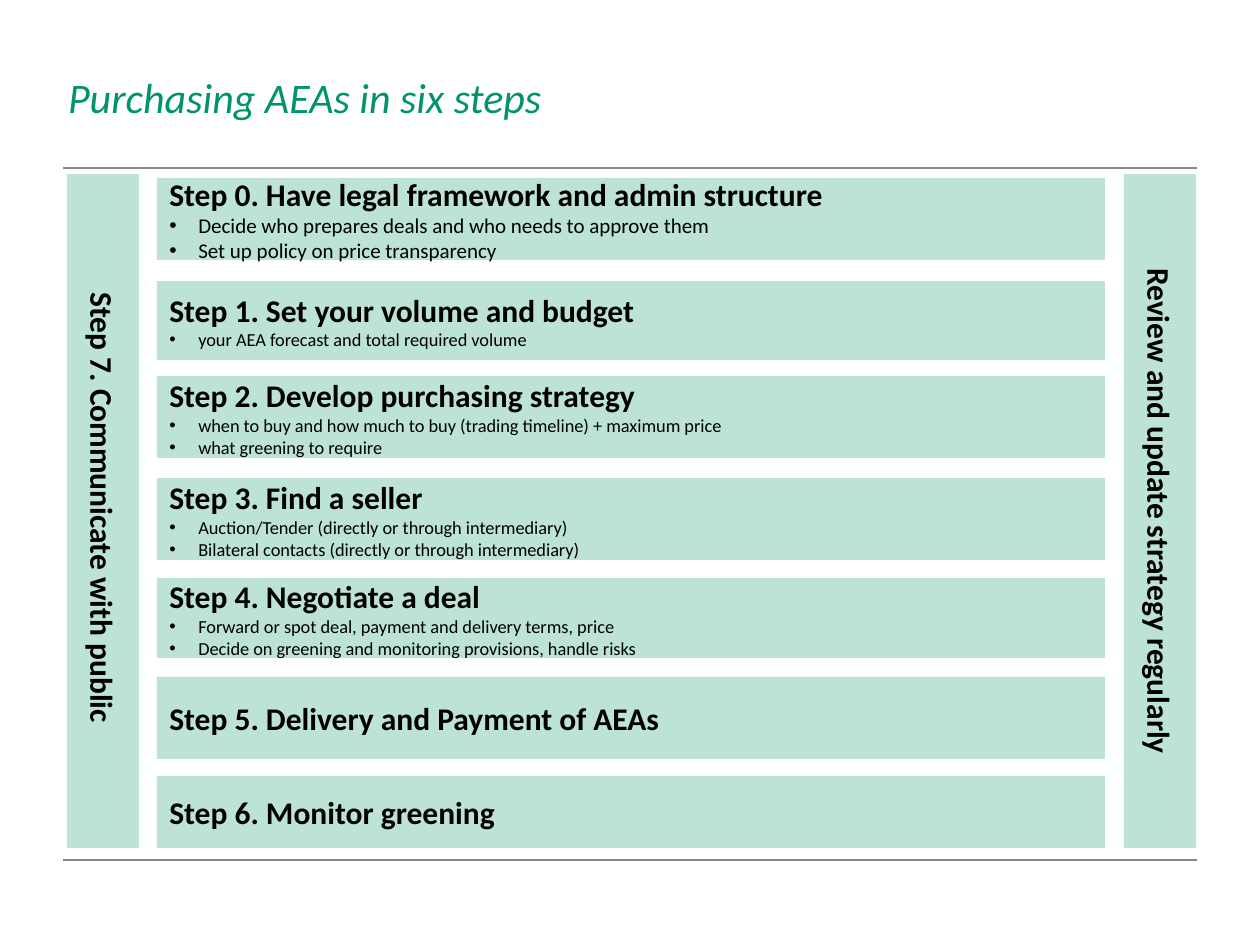
from lxml import etree
from pptx import Presentation, util as u
from pptx.dml import color
from pptx.enum import shapes, text
from pptx.oxml import ns

FONT = "Calibri"
GREEN, GREY, BLACK = "00946C", "87888A", "000000"
PANEL_ALPHA = 26
PX_PER_INCH = 126
HANGING = u.Pt(16.56)

# top, height, heading, size of the points, points
STEPS = [
    (178, 82, "Step 0. Have legal framework and admin structure", 12,
     ["Decide who prepares deals and who needs to approve them",
      "Set up policy on price transparency"]),
    (281, 79, "Step 1. Set your volume and budget", 10.5,
     ["your AEA forecast and total required volume"]),
    (376, 82, "Step 2. Develop purchasing strategy", 10.5,
     ["when to buy and how much to buy (trading timeline) + maximum price",
      "what greening to require"]),
    (478, 82, "Step 3. Find a seller", 10.5,
     ["Auction/Tender (directly or through intermediary)",
      "Bilateral contacts (directly or through intermediary)"]),
    (578, 80, "Step 4. Negotiate a deal", 10.5,
     ["Forward or spot deal, payment and delivery terms, price",
      "Decide on greening and monitoring provisions, handle risks"]),
    (677, 82, "Step 5. Delivery and Payment of AEAs", 10.5, []),
    (776, 72, "Step 6. Monitor greening", 10.5, []),
]


def px(length):
    return u.Emu(round(length * 914400 / PX_PER_INCH))


def rgb(value):
    return color.RGBColor.from_string(value)


def style(paragraph, size, colour=BLACK, bold=False, italic=False):
    for run in paragraph.runs:
        font = run.font
        font.name, font.size = FONT, u.Pt(size)
        font.bold, font.italic = bold, italic
        font.color.rgb = rgb(colour)


def add_bullet(paragraph):
    props = paragraph._p.get_or_add_pPr()
    props.set("marL", str(HANGING))
    props.set("indent", str(-HANGING))
    etree.SubElement(props, ns.qn("a:buFont")).set("typeface", "Arial")
    etree.SubElement(props, ns.qn("a:buChar")).set("char", "•")


def add_rule(slide, left, top, width):
    rule = slide.shapes.add_connector(
        shapes.MSO_CONNECTOR.STRAIGHT, px(left), px(top), px(left + width), px(top))
    rule.line.color.rgb = rgb(GREY)
    rule.line.width = u.Pt(1)
    etree.SubElement(rule._element.spPr, ns.qn("a:effectLst"))


def add_panel(slide, left, top, width, height, heading, align):
    panel = slide.shapes.add_shape(
        shapes.MSO_SHAPE.RECTANGLE, px(left), px(top), px(width), px(height))
    panel.shadow.inherit = False
    panel.line.fill.background()
    panel.fill.solid()
    panel.fill.fore_color.rgb = rgb(GREEN)
    tint = panel._element.spPr.find(".//" + ns.qn("a:srgbClr"))
    etree.SubElement(tint, ns.qn("a:alpha")).set("val", str(PANEL_ALPHA * 1000))
    frame = panel.text_frame
    frame.word_wrap = True
    frame.vertical_anchor = text.MSO_ANCHOR.MIDDLE
    frame.text = heading
    frame.paragraphs[0].alignment = align
    style(frame.paragraphs[0], 18, bold=True)
    return frame


def add_step(slide, left, top, width, height, heading, size, points):
    frame = add_panel(slide, left, top, width, height, heading, text.PP_ALIGN.LEFT)
    for point in points:
        paragraph = frame.add_paragraph()
        paragraph.text = point
        paragraph.alignment = text.PP_ALIGN.LEFT
        add_bullet(paragraph)
        style(paragraph, size)


def add_side_bar(slide, left, top, width, height, label):
    frame = add_panel(slide, left, top, width, height, label, text.PP_ALIGN.CENTER)
    frame.margin_left = frame.margin_right = u.Inches(0.1)
    frame.margin_top = frame.margin_bottom = u.Inches(0.07)
    frame._txBody.bodyPr.set("vert", "vert")


def add_title(slide, left, top, width, height, title):
    frame = slide.shapes.add_textbox(px(left), px(top), px(width), px(height)).text_frame
    frame.word_wrap = True
    frame.margin_left = frame.margin_right = frame.margin_top = frame.margin_bottom = 0
    frame.text = title
    style(frame.paragraphs[0], 24, GREEN, italic=True)


def main():
    deck = Presentation()
    deck.slide_width, deck.slide_height = px(1260), px(945)
    slide = deck.slides.add_slide(deck.slide_layouts[6])

    # Frame lines and title
    for top in (168, 860):
        add_rule(slide, 63, top, 1134)
    add_title(slide, 68, 72, 924, 62, "Purchasing AEAs in six steps")

    # Steps between the two ongoing tasks
    for top, height, heading, size, points in STEPS:
        add_step(slide, 157, top, 948, height, heading, size, points)
    for left, label in ((67, "Step 7. Communicate with public "),
                        (1124, "Review and update strategy regularly")):
        add_side_bar(slide, left, 174, 72, 674, label)

    deck.save("out.pptx")


if __name__ == "__main__":
    main()
